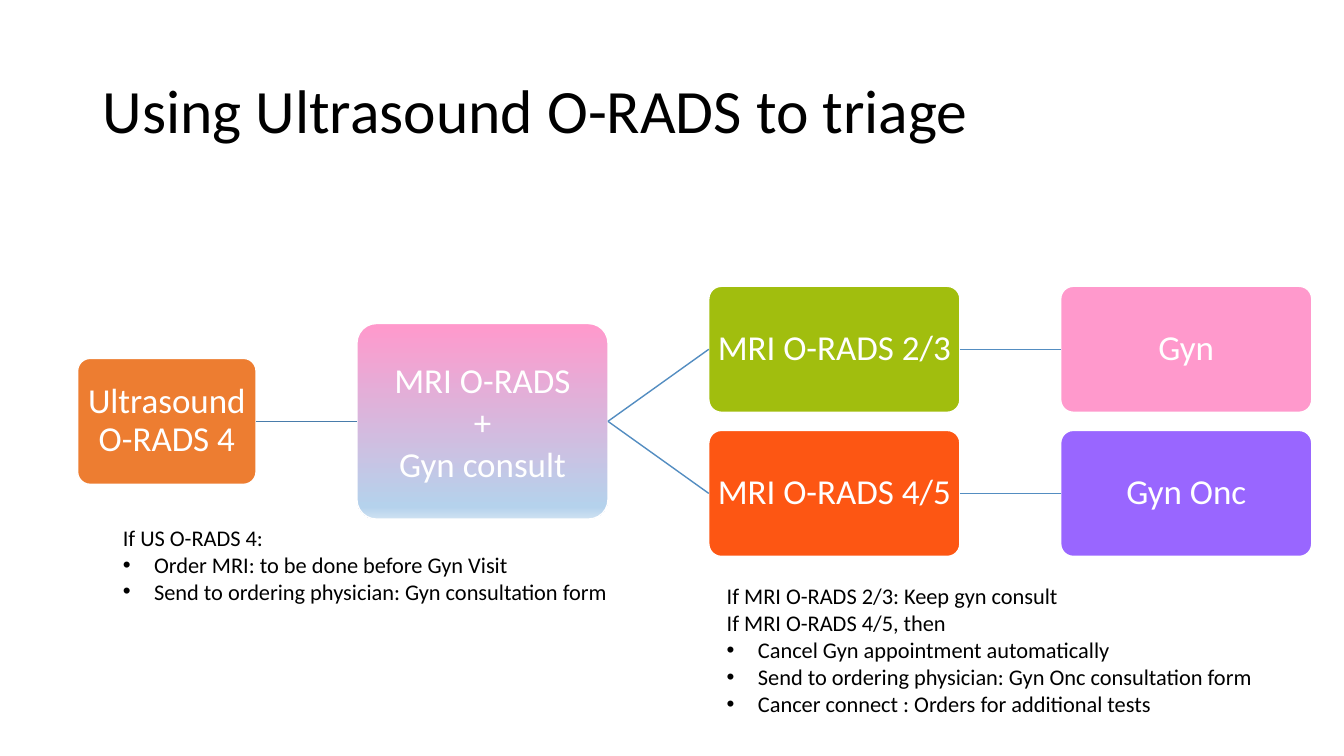
from copy import deepcopy
from dataclasses import dataclass

from lxml.etree import SubElement as Sub
from pptx import Presentation
from pptx.dml.color import RGBColor as Rgb
from pptx.enum.shapes import MSO_CONNECTOR as Conn, MSO_SHAPE as Kind
from pptx.enum.text import MSO_ANCHOR as Anchor, MSO_AUTO_SIZE as Fit, PP_ALIGN as Align
from pptx.oxml.ns import qn
from pptx.util import Inches, Pt


@dataclass(frozen=True)
class Theme:
    """Colours, font and type sizes of the slide."""
    font: str = "Calibri"
    head: int = 44
    node: int = 25
    note: int = 16
    ink: str = "000000"
    white: str = "FFFFFF"
    orange: str = "ED7D31"
    pink: str = "FF99CC"
    green: str = "A1BE0E"
    red: str = "FD5613"
    violet: str = "9966FF"
    trunk: str = "497CAB"
    branch: str = "538DC1"
    blend: tuple = ((0, "FF99CC"), (0.94, "B5D2EC"), (1, "CEE1F2"))


LOOK = Theme()
WIDE, HIGH = 13.33, 7.5
COL, GAP, ROW = 2.49, 1.0, 1.25
STEP = COL + GAP
LEFT, MID = 3.54, 4.18
RISE = 0.715


def place(shape, box):
    """Move a shape to a box given in inches."""
    shape.left, shape.top, shape.width, shape.height = map(Inches, box)


def write(para, text, size, tint):
    """Add one run to a paragraph."""
    run = para.add_run()
    run.text = text
    font = run.font
    font.name, font.size = LOOK.font, Pt(size)
    font.color.rgb = Rgb.from_string(tint)


def lines(frame, texts):
    """Yield a paragraph of the frame for each text."""
    for i, text in enumerate(texts):
        yield (frame.add_paragraph() if i else frame.paragraphs[0]), text


def shade(shape, stops):
    """Fill a shape from top to bottom with colour stops."""
    shape.fill.gradient()
    shape.fill.gradient_angle = 270
    group = shape._element.spPr.find(qn("a:gradFill")).find(qn("a:gsLst"))
    group.append(deepcopy(group[-1]))
    for stop, (pos, tint) in zip(shape.fill.gradient_stops, stops):
        stop.position = pos
        stop.color.rgb = Rgb.from_string(tint)


def title(slide, box, text):
    """Fill and place the title."""
    head = slide.shapes.title
    place(head, box)
    frame = head.text_frame
    frame.vertical_anchor = Anchor.MIDDLE
    para = frame.paragraphs[0]
    para.alignment, para.line_spacing = Align.LEFT, 0.9
    write(para, text, LOOK.head, LOOK.ink)


def node(slide, box, texts, fill):
    """Draw a rounded box centred on its row with white text."""
    left, mid, width, height = box
    shape = slide.shapes.add_shape(Kind.ROUNDED_RECTANGLE, 0, 0, 0, 0)
    place(shape, (left, mid - height / 2, width, height))
    shape.adjustments[0] = 0.1
    shape.shadow.inherit = False
    if isinstance(fill, tuple):
        shade(shape, fill)
    else:
        shape.fill.solid()
        shape.fill.fore_color.rgb = Rgb.from_string(fill)
    shape.line.color.rgb = Rgb.from_string(LOOK.white)
    shape.line.width = Pt(1)
    frame = shape.text_frame
    frame.word_wrap, frame.vertical_anchor = True, Anchor.MIDDLE
    frame.margin_left = frame.margin_right = Inches(0.02)
    frame.margin_top = frame.margin_bottom = Inches(0.02)
    for para, text in lines(frame, texts):
        para.alignment = Align.CENTER
        para.line_spacing = 0.9 if len(texts) == 1 else 1.0
        write(para, text, LOOK.node, LOOK.white)
    return shape


def link(slide, start, end, tint):
    """Join the right side of one box to the left side of the next."""
    line = slide.shapes.add_connector(Conn.STRAIGHT, 0, 0, 0, 0)
    line.begin_connect(start, 3)
    line.end_connect(end, 1)
    line.line.color.rgb = Rgb.from_string(tint)
    line.line.width = Pt(1)
    Sub(line._element.spPr, qn("a:effectLst"))


def flow(slide, left, mid):
    """Draw the triage tree, its second column at left and its axis at mid."""
    small = 1.77
    scan = node(slide, (left - GAP - small, mid, small, ROW),
                ["Ultrasound O-RADS 4"], LOOK.orange)
    plan = node(slide, (left, mid, COL, 1.94),
                ["MRI O-RADS", "+", "Gyn consult"], LOOK.blend)
    link(slide, scan, plan, LOOK.trunk)
    arms = [(-RISE, "MRI O-RADS 2/3", LOOK.green, "Gyn", LOOK.pink),
            (RISE, "MRI O-RADS 4/5", LOOK.red, "Gyn Onc", LOOK.violet)]
    for shift, grade, hue, clinic, tone in arms:
        test = node(slide, (left + STEP, mid + shift, COL, ROW), [grade], hue)
        goal = node(slide, (left + 2 * STEP, mid + shift, COL, ROW), [clinic], tone)
        link(slide, plan, test, LOOK.branch)
        link(slide, test, goal, LOOK.branch)


def notes(slide, box, plain, points):
    """Write plain lines followed by bullet points."""
    frame = slide.shapes.add_textbox(*map(Inches, box)).text_frame
    frame.word_wrap, frame.auto_size = True, Fit.SHAPE_TO_FIT_TEXT
    for para, text in lines(frame, plain + points):
        if text in points:
            props = para._p.get_or_add_pPr()
            props.set("marL", str(Inches(0.31)))
            props.set("indent", str(-Inches(0.31)))
            Sub(props, qn("a:buFont"), typeface="Arial")
            Sub(props, qn("a:buChar"), char="•")
        write(para, text, LOOK.note, LOOK.ink)


def main():
    """Build the triage slide."""
    deck = Presentation()
    deck.slide_width, deck.slide_height = Inches(WIDE), Inches(HIGH)
    slide = deck.slides.add_slide(deck.slide_layouts[5])
    title(slide, (0.92, 0.4, 11.5, 1.45), "Using Ultrasound O-RADS to triage")
    flow(slide, LEFT, MID)
    notes(slide, (7.11, 5.73, 5.64, 1.45),
          ["If MRI O-RADS 2/3: Keep gyn consult", "If MRI O-RADS 4/5, then"],
          ["Cancel Gyn appointment automatically",
           "Send to ordering physician: Gyn Onc consultation form",
           "Cancer connect : Orders for additional tests"])
    notes(slide, (1.12, 5.15, 5.11, 0.91), ["If US O-RADS 4:"],
          ["Order MRI: to be done before Gyn Visit",
           "Send to ordering physician: Gyn consultation form"])
    deck.save("out.pptx")


if __name__ == "__main__":
    main()
